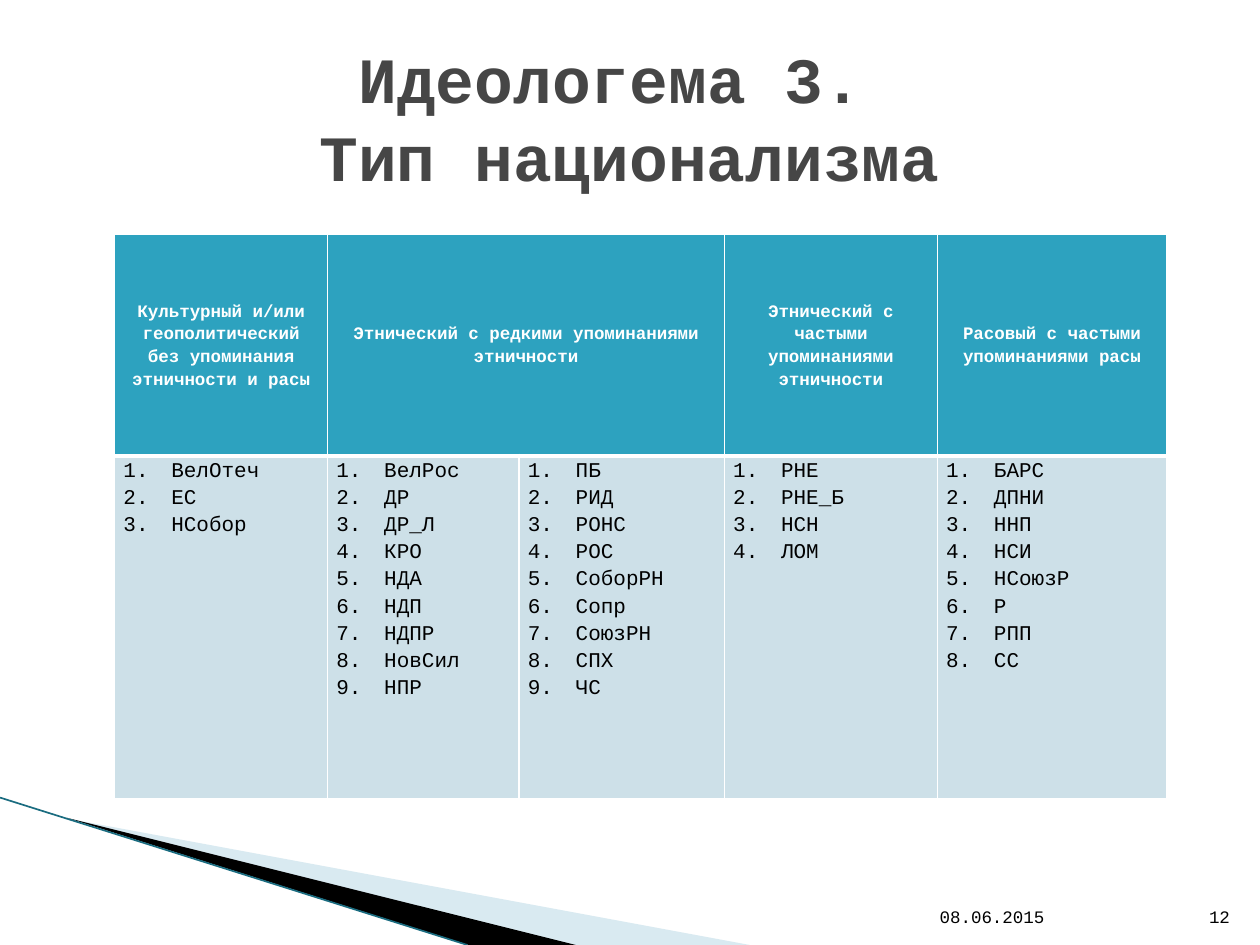
"""Build the slide that groups organisations by type of nationalism."""
from dataclasses import dataclass

from lxml import etree
from pptx import Presentation
from pptx.dml.color import RGBColor
from pptx.enum.shapes import MSO_CONNECTOR
from pptx.enum.text import MSO_ANCHOR, PP_ALIGN
from pptx.oxml.ns import qn
from pptx.util import Inches, Pt

FONT = "Courier New"
WHITE = RGBColor(0xFF, 0xFF, 0xFF)
BLACK = RGBColor(0x00, 0x00, 0x00)
TITLE_GREY = RGBColor(0x46, 0x46, 0x46)
HEADER_TEAL = RGBColor(0x2D, 0xA2, 0xBF)
BODY_BLUE = RGBColor(0xCD, 0xE0, 0xE8)
WEDGE_BLUE = RGBColor(0xA0, 0xCB, 0xDC)
EDGE_TEAL = RGBColor(0x1A, 0x6C, 0x80)

LEFT, CENTER, RIGHT, JUSTIFY = PP_ALIGN.LEFT, PP_ALIGN.CENTER, PP_ALIGN.RIGHT, PP_ALIGN.JUSTIFY
TOP, MIDDLE, BOTTOM = MSO_ANCHOR.TOP, MSO_ANCHOR.MIDDLE, MSO_ANCHOR.BOTTOM
STRAIGHT = MSO_CONNECTOR.STRAIGHT

WIDTH, HEIGHT = 10, 7.5
COLUMN_WIDTHS = (1.69, 1.52, 1.63, 1.69, 1.82)
ROW_HEIGHTS = (1.76, 2.72)
LINE_SPACING = 1.15
INDENT = Inches(0.38)


@dataclass(frozen=True)
class Group:
    """One heading and the lists of names in the columns below it."""

    heading: str
    columns: tuple[str, ...]


@dataclass(frozen=True)
class Wedge:
    """One filled outline of the corner decoration, in inches."""

    points: tuple[tuple[float, float], ...]
    color: RGBColor
    opacity: int = 100


@dataclass(frozen=True)
class Footer:
    """One footer text with its left edge and width in inches."""

    text: str
    left: float
    width: float
    align: PP_ALIGN


GROUPS = (
    Group("Культурный и/или геополитический без упоминания этничности и расы",
          ("ВелОтеч ЕС НСобор",)),
    Group("Этнический с редкими упоминаниями этничности",
          ("ВелРос ДР ДР_Л КРО НДА НДП НДПР НовСил НПР",
           "ПБ РИД РОНС РОС СоборРН Сопр СоюзРН СПХ ЧС")),
    Group("Этнический с частыми упоминаниями этничности",
          ("РНЕ РНЕ_Б НСН ЛОМ",)),
    Group("Расовый с частыми упоминаниями расы",
          ("БАРС ДПНИ ННП НСИ НСоюзР Р РПП СС",)),
)
WEDGES = (
    Wedge(((0.55, 6.5), (5.95, 7.5), (4.56, 7.5)), WEDGE_BLUE, 40),
    Wedge(((0.53, 6.49), (4.57, 7.5), (3.72, 7.5)), BLACK),
)
FOOTERS = (
    Footer("08.06.2015", 7.36, 2.1, LEFT),
    Footer("12", 9.46, 0.4, RIGHT),
)


def style_font(font, size: float, color: RGBColor, bold: bool = False) -> None:
    """Apply the slide's typeface with a size, colour and weight."""
    font.name = FONT
    font.size = Pt(size)
    font.bold = bold
    font.color.rgb = color


def draw_wedge(page, wedge: Wedge) -> None:
    """Draw one borderless outline of the corner decoration."""
    first, *rest = [(Inches(x), Inches(y)) for x, y in wedge.points]
    builder = page.shapes.build_freeform(*first)
    builder.add_line_segments(rest)
    shape = builder.convert_to_shape()
    shape.shadow.inherit = False
    shape.line.fill.background()
    shape.fill.solid()
    shape.fill.fore_color.rgb = wedge.color
    if wedge.opacity < 100:
        color = shape.fill._xPr.find(f".//{qn('a:srgbClr')}")
        etree.SubElement(color, qn("a:alpha"), val=str(wedge.opacity * 1000))


def draw_edge(page) -> None:
    """Draw the thin line along the lower side of the decoration."""
    edge = page.shapes.add_connector(STRAIGHT, 0, Inches(6.33), Inches(3.71), Inches(HEIGHT))
    edge.line.color.rgb = EDGE_TEAL
    edge.line.width = Pt(0.95)
    etree.SubElement(edge._element.spPr, qn("a:effectLst"))


def draw_title(page) -> None:
    """Place and format the title placeholder."""
    title = page.shapes.title
    title.left, title.top = Inches(0.5), Inches(0.3)
    title.width, title.height = Inches(WIDTH - 1), Inches(1.25)
    frame = title.text_frame
    frame.text = "Идеологема 3. \vТип национализма"
    frame.vertical_anchor = MIDDLE
    para = frame.paragraphs[0]
    para.alignment = CENTER
    style_font(para.font, 36.9, TITLE_GREY, True)


def draw_footer(page, footer: Footer) -> None:
    """Draw one footer text along the bottom of the slide."""
    box = page.shapes.add_textbox(
        Inches(footer.left), Inches(7.01), Inches(footer.width), Inches(0.4))
    frame = box.text_frame
    frame.word_wrap = True
    frame.vertical_anchor = BOTTOM
    para = frame.paragraphs[0]
    para.text = footer.text
    para.alignment = footer.align
    style_font(para.font, 10, BLACK)


def format_cell(cell, fill: RGBColor, anchor: MSO_ANCHOR, top: float, bottom: float) -> None:
    """Set the fill, margins and white borders of a table cell."""
    cell.fill.solid()
    cell.fill.fore_color.rgb = fill
    cell.vertical_anchor = anchor
    cell.margin_left = cell.margin_right = Inches(0.07)
    cell.margin_top = cell.margin_bottom = 0
    properties = cell._tc.get_or_add_tcPr()
    borders = (("a:lnL", 1), ("a:lnR", 1), ("a:lnT", top), ("a:lnB", bottom))
    for index, (tag, width) in enumerate(borders):
        border = etree.Element(qn(tag), w=str(Pt(width)))
        solid = etree.SubElement(border, qn("a:solidFill"))
        etree.SubElement(solid, qn("a:srgbClr"), val=str(WHITE))
        properties.insert(index, border)


def write_heading(cell, heading: str) -> None:
    """Write a centred column heading."""
    para = cell.text_frame.paragraphs[0]
    para.text = heading
    para.alignment = CENTER
    para.line_spacing = LINE_SPACING
    style_font(para.font, 10, WHITE, True)


def write_list(cell, names: str) -> None:
    """Write space-separated names as a numbered list."""
    frame = cell.text_frame
    frame.text = "\n".join(names.split())
    for para in frame.paragraphs:
        para.alignment = JUSTIFY
        para.line_spacing = LINE_SPACING
        properties = para._p.get_or_add_pPr()
        properties.set("marL", str(INDENT))
        properties.set("indent", str(-INDENT))
        etree.SubElement(properties, qn("a:buFont"), typeface=FONT)
        etree.SubElement(properties, qn("a:buAutoNum"), type="arabicPeriod")
        style_font(para.font, 12, BLACK)


def draw_table(page) -> None:
    """Draw the groups as a heading row above a row of numbered lists."""
    table = page.shapes.add_table(
        len(ROW_HEIGHTS), len(COLUMN_WIDTHS), Inches(0.91), Inches(1.86),
        Inches(sum(COLUMN_WIDTHS)), Inches(sum(ROW_HEIGHTS))).table
    for column, width in zip(table.columns, COLUMN_WIDTHS):
        column.width = Inches(width)
    for row, height in zip(table.rows, ROW_HEIGHTS):
        row.height = Inches(height)
    start = 0
    for group in GROUPS:
        end = start + len(group.columns)
        for index, names in enumerate(group.columns, start):
            format_cell(table.cell(0, index), HEADER_TEAL, MIDDLE, 1, 3)
            format_cell(table.cell(1, index), BODY_BLUE, TOP, 3, 1)
            write_list(table.cell(1, index), names)
        if end - start > 1:
            table.cell(0, start).merge(table.cell(0, end - 1))
        write_heading(table.cell(0, start), group.heading)
        start = end


def main() -> None:
    """Assemble and save the deck."""
    deck = Presentation()
    deck.slide_width, deck.slide_height = Inches(WIDTH), Inches(HEIGHT)
    page = deck.slides.add_slide(deck.slide_layouts[5])
    for wedge in WEDGES:
        draw_wedge(page, wedge)
    draw_edge(page)
    draw_table(page)
    for footer in FOOTERS:
        draw_footer(page, footer)
    draw_title(page)
    deck.save("out.pptx")


if __name__ == "__main__":
    main()
